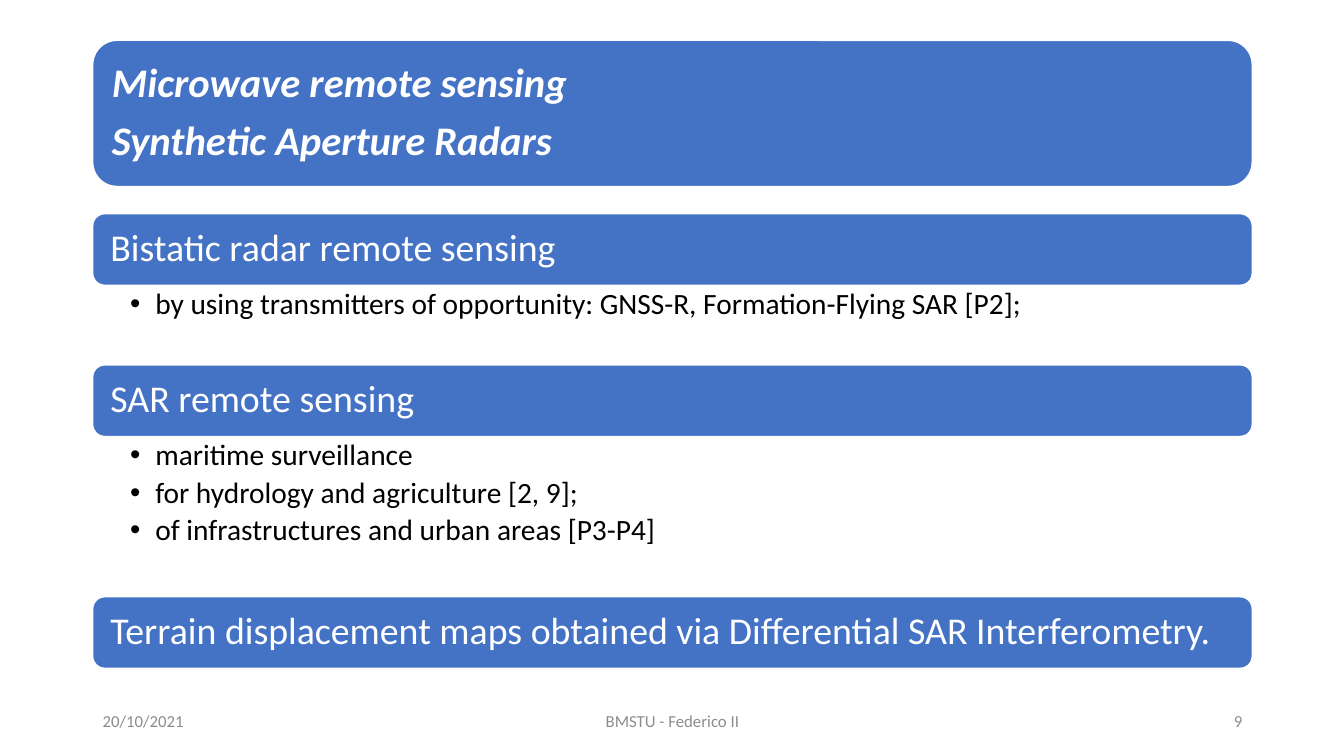
from lxml.etree import SubElement
from pptx import Presentation
from pptx.dml.color import RGBColor
from pptx.enum.shapes import MSO_SHAPE
from pptx.enum.text import MSO_ANCHOR, MSO_AUTO_SIZE, PP_ALIGN
from pptx.oxml.ns import qn
from pptx.util import Inches, Pt

LEFT, WIDTH = 0.92, 11.5
BAR_HEIGHT = 0.71


def color(value):
    return RGBColor.from_string(value)


def assign(target, values):
    for name, value in values.items():
        setattr(target, name, value)


class RadarSlide:
    BLUE, WHITE, BLACK, GRAY = "4472C4", "FFFFFF", "000000", "8C8C8C"
    FONT = "Calibri"

    def __init__(self, presentation):
        self.slide = presentation.slides.add_slide(presentation.slide_layouts[3])
        self.shapes = self.slide.shapes

    def place(self, shape, left, top, width, height):
        box = dict(left=left, top=top, width=width, height=height)
        assign(shape, {name: Inches(value) for name, value in box.items()})

    def fill_text(self, shape, lines, size, hex_color, margins=(0.1, 0.05, 0.1, 0.05),
                  anchor=MSO_ANCHOR.MIDDLE, alignment=PP_ALIGN.LEFT, line_spacing=1.0,
                  space_after=0, bulleted=False, **emphasis):
        frame = shape.text_frame
        sides = ("margin_left", "margin_top", "margin_right", "margin_bottom")
        assign(frame, dict(word_wrap=True, auto_size=MSO_AUTO_SIZE.NONE, vertical_anchor=anchor))
        assign(frame, {side: Inches(value) for side, value in zip(sides, margins)})
        frame.text = "\n".join(lines)
        for paragraph in frame.paragraphs:
            assign(paragraph, dict(alignment=alignment, line_spacing=line_spacing,
                                   space_before=Pt(0), space_after=Pt(space_after)))
            if bulleted:
                self.bullet(paragraph)
            assign(paragraph.font, dict(name=self.FONT, size=Pt(size), **emphasis))
            paragraph.font.color.rgb = color(hex_color)

    def bullet(self, paragraph):
        paragraph.level = 1
        properties = paragraph._p.get_or_add_pPr()
        properties.set("marL", str(Inches(0.25)))
        properties.set("indent", str(-Inches(0.25)))
        SubElement(properties, qn("a:buFont"), typeface="Arial")
        SubElement(properties, qn("a:buChar"), char="•")

    def bar(self, top, height=BAR_HEIGHT):
        box = [Inches(value) for value in (LEFT, top, WIDTH, height)]
        shape = self.shapes.add_shape(MSO_SHAPE.ROUNDED_RECTANGLE, *box)
        shape.shadow.inherit = False
        shape.fill.solid()
        shape.fill.fore_color.rgb = color(self.BLUE)
        shape.line.color.rgb = color(self.WHITE)
        shape.line.width = Pt(1)
        return shape

    def title(self, lines):
        self.bar(0.4, 1.45)
        title = self.shapes.title
        self.shapes._spTree.append(title._element)
        self.place(title, 0.99, 0.47, 11.36, 1.31)
        self.fill_text(title, lines, 29, self.WHITE, margins=[0.12] * 4,
                       line_spacing=0.9, space_after=9.5, bold=True, italic=True)

    def heading(self, top, text):
        self.fill_text(self.bar(top), [text], 27, self.WHITE, margins=[0.14] * 4,
                       line_spacing=0.9)

    def items(self, index, top, height, lines):
        body = self.slide.placeholders[index]
        self.place(body, LEFT, top, WIDTH, height)
        self.fill_text(body, lines, 21, self.BLACK, margins=(0.37, 0.04, 0.21, 0.04),
                       anchor=MSO_ANCHOR.TOP, line_spacing=0.9, space_after=4, bulleted=True)

    def footer(self, left, width, text, alignment):
        box = [Inches(value) for value in (left, 6.95, width, 0.4)]
        self.fill_text(self.shapes.add_textbox(*box), [text], 12, self.GRAY,
                       alignment=alignment)


def main():
    presentation = Presentation()
    assign(presentation, dict(slide_width=Inches(13.33), slide_height=Inches(7.5)))
    radar = RadarSlide(presentation)
    radar.title(["Microwave remote sensing", "Synthetic Aperture Radars"])

    sections = [
        ("Bistatic radar remote sensing", 0.79,
         ["by using transmitters of opportunity: GNSS-R, Formation-Flying SAR [P2];"]),
        ("SAR remote sensing", 1.59,
         ["maritime surveillance",
          "for hydrology and agriculture [2, 9];",
          "of infrastructures and urban areas [P3-P4]"]),
    ]
    top = 2.12
    for index, (heading, height, lines) in enumerate(sections, start=1):
        radar.heading(top, heading)
        radar.items(index, top + BAR_HEIGHT, height, lines)
        top += BAR_HEIGHT + height
    radar.heading(top, "Terrain displacement maps obtained via Differential SAR Interferometry.")

    radar.footer(LEFT, 3, "20/10/2021", PP_ALIGN.LEFT)
    radar.footer(4.42, 4.5, "BMSTU - Federico II", PP_ALIGN.CENTER)
    radar.footer(9.42, 3, "9", PP_ALIGN.RIGHT)
    presentation.save("out.pptx")


if __name__ == "__main__":
    main()
